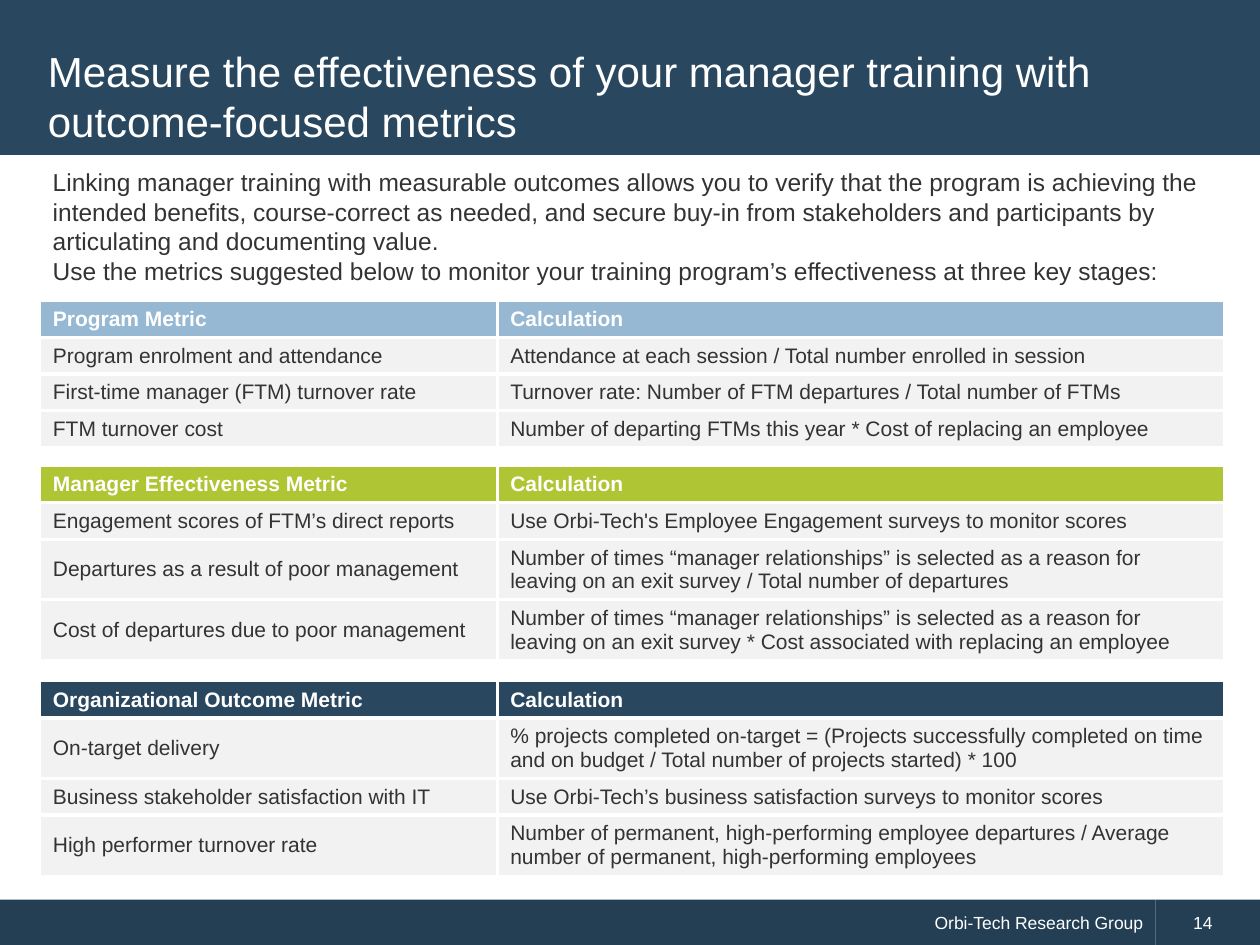
from dataclasses import dataclass

from lxml import etree
from pptx import Presentation
from pptx import util as u
from pptx.dml.color import RGBColor
from pptx.enum import shapes, text
from pptx.oxml import ns

WIDTH, HEIGHT = u.Inches(10), u.Inches(7.5)
FONT = "Arial"
WHITE = RGBColor(0xFF, 0xFF, 0xFF)
INK = RGBColor(0x33, 0x33, 0x33)
NAVY = RGBColor(0x29, 0x47, 0x5F)
FOOTER_NAVY = RGBColor(0x24, 0x3F, 0x54)
SKY = RGBColor(0x96, 0xB8, 0xD2)
LIME = RGBColor(0xB0, 0xC5, 0x34)
ROW_GRAY = RGBColor(0xF2, 0xF2, 0xF2)

LEFT, CONTENT_WIDTH = u.Inches(0.32), u.Inches(9.39)
COLUMN_WIDTHS = (u.Inches(3.63), u.Inches(5.76))
LINE_HEIGHT, ROW_PADDING = u.Inches(0.19), u.Inches(0.1)
BORDER_WIDTH = u.Pt(2.25)


@dataclass(frozen=True)
class Metric:
    name: str
    calculation: str
    lines: int = 1


@dataclass(frozen=True)
class MetricTable:
    top: float
    heading: str
    color: RGBColor
    metrics: tuple[Metric, ...]


TABLES = (
    MetricTable(2.39, "Program Metric", SKY, (
        Metric("Program enrolment and attendance",
               "Attendance at each session / Total number enrolled in session"),
        Metric("First-time manager (FTM) turnover rate",
               "Turnover rate: Number of FTM departures / Total number of FTMs"),
        Metric("FTM turnover cost",
               "Number of departing FTMs this year * Cost of replacing an employee"),
    )),
    MetricTable(3.7, "Manager Effectiveness Metric", LIME, (
        Metric("Engagement scores of FTM’s direct reports",
               "Use Orbi-Tech's Employee Engagement surveys to monitor scores"),
        Metric("Departures as a result of poor management",
               "Number of times “manager relationships” is selected as a reason for "
               "leaving on an exit survey / Total number of departures", 2),
        Metric("Cost of departures due to poor management",
               "Number of times “manager relationships” is selected as a reason for "
               "leaving on an exit survey * Cost associated with replacing an employee", 2),
    )),
    MetricTable(5.41, "Organizational Outcome Metric", NAVY, (
        Metric("On-target delivery",
               "% projects completed on-target = (Projects successfully completed on time "
               "and on budget / Total number of projects started) * 100", 2),
        Metric("Business stakeholder satisfaction with IT",
               "Use Orbi-Tech’s business satisfaction surveys to monitor scores"),
        Metric("High performer turnover rate",
               "Number of permanent, high-performing employee departures / Average "
               "number of permanent, high-performing employees", 2),
    )),
)
INTRODUCTION = (
    "Linking manager training with measurable outcomes allows you to verify that the program "
    "is achieving the intended benefits, course-correct as needed, and secure buy-in from "
    "stakeholders and participants by articulating and documenting value.",
    "Use the metrics suggested below to monitor your training program’s effectiveness at "
    "three key stages:",
)


def format_paragraph(paragraph, size: float, color: RGBColor, bold: bool = False,
                     align=text.PP_ALIGN.LEFT) -> None:
    paragraph.alignment = align
    font = paragraph.font
    font.name, font.size, font.bold = FONT, u.Pt(size), bold
    font.color.rgb = color


def add_band(slide, left: int, top: int, width: int, height: int, color: RGBColor):
    band = slide.shapes.add_shape(shapes.MSO_SHAPE.RECTANGLE, left, top, width, height)
    band.shadow.inherit = False
    band.fill.solid()
    band.fill.fore_color.rgb = color
    band.line.fill.background()
    return band


def add_title(slide) -> None:
    title = slide.shapes.title
    title.left, title.top = u.Inches(0.28), u.Inches(0.28)
    title.width, title.height = u.Inches(9.43), u.Inches(0.96)
    frame = title.text_frame
    frame.text = "Measure the effectiveness of your manager training with outcome-focused metrics"
    frame.word_wrap = True
    frame.auto_size = text.MSO_AUTO_SIZE.NONE
    frame.vertical_anchor = text.MSO_ANCHOR.MIDDLE
    format_paragraph(frame.paragraphs[0], 24, WHITE)
    band = add_band(slide, 0, 0, WIDTH, u.Inches(1.23), NAVY)
    title.element.addprevious(band.element)


def add_introduction(slide) -> None:
    box = slide.shapes.add_textbox(LEFT, u.Inches(1.28), CONTENT_WIDTH, u.Inches(1.04))
    frame = box.text_frame
    frame.word_wrap = True
    frame.text = "\n".join(INTRODUCTION)
    for paragraph in frame.paragraphs:
        format_paragraph(paragraph, 14, INK)


def add_footer(slide) -> None:
    split, top = u.Inches(9.17), u.Inches(7.14)
    parts = (
        (0, split, "Orbi-Tech Research Group", text.PP_ALIGN.RIGHT, u.Inches(0.1)),
        (split, WIDTH - split, "14", text.PP_ALIGN.LEFT, u.Inches(0.3)),
    )
    for left, width, words, align, margin in parts:
        band = add_band(slide, left, top, width, HEIGHT - top, FOOTER_NAVY)
        frame = band.text_frame
        frame.text = words
        frame.margin_left = margin
        frame.vertical_anchor = text.MSO_ANCHOR.MIDDLE
        format_paragraph(frame.paragraphs[0], 10, WHITE, align=align)


def add_borders(cell, sides: str) -> None:
    properties = cell._tc.get_or_add_tcPr()
    for side in sides:
        line = etree.SubElement(properties, ns.qn(f"a:ln{side}"), w=str(BORDER_WIDTH))
        fill = etree.SubElement(line, ns.qn("a:solidFill"))
        etree.SubElement(fill, ns.qn("a:srgbClr"), val=str(WHITE))


def add_metric_table(slide, group: MetricTable) -> None:
    rows = (Metric(group.heading, "Calculation"), *group.metrics)
    heights = [row.lines * LINE_HEIGHT + ROW_PADDING for row in rows]
    table = slide.shapes.add_table(len(rows), len(COLUMN_WIDTHS), LEFT, u.Inches(group.top),
                                   CONTENT_WIDTH, sum(heights)).table
    table.first_row = table.horz_banding = False
    for column, width in zip(table.columns, COLUMN_WIDTHS):
        column.width = width
    for row_index, row in enumerate(rows):
        table.rows[row_index].height = heights[row_index]
        is_heading = row_index == 0
        for column_index, words in enumerate((row.name, row.calculation)):
            cell = table.cell(row_index, column_index)
            cell.text = words
            cell.vertical_anchor = text.MSO_ANCHOR.MIDDLE
            format_paragraph(cell.text_frame.paragraphs[0], 12,
                             WHITE if is_heading else INK, bold=is_heading)
            sides = "L" if column_index else "R"
            sides += "" if is_heading else "T"
            sides += "B" if row_index < len(rows) - 1 else ""
            add_borders(cell, sides)
            cell.fill.solid()
            cell.fill.fore_color.rgb = group.color if is_heading else ROW_GRAY


def main() -> None:
    presentation = Presentation()
    presentation.slide_width, presentation.slide_height = WIDTH, HEIGHT
    slide = presentation.slides.add_slide(presentation.slide_layouts.get_by_name("Title Only"))
    add_title(slide)
    add_footer(slide)
    for group in TABLES:
        add_metric_table(slide, group)
    add_introduction(slide)
    presentation.save("out.pptx")


if __name__ == "__main__":
    main()
